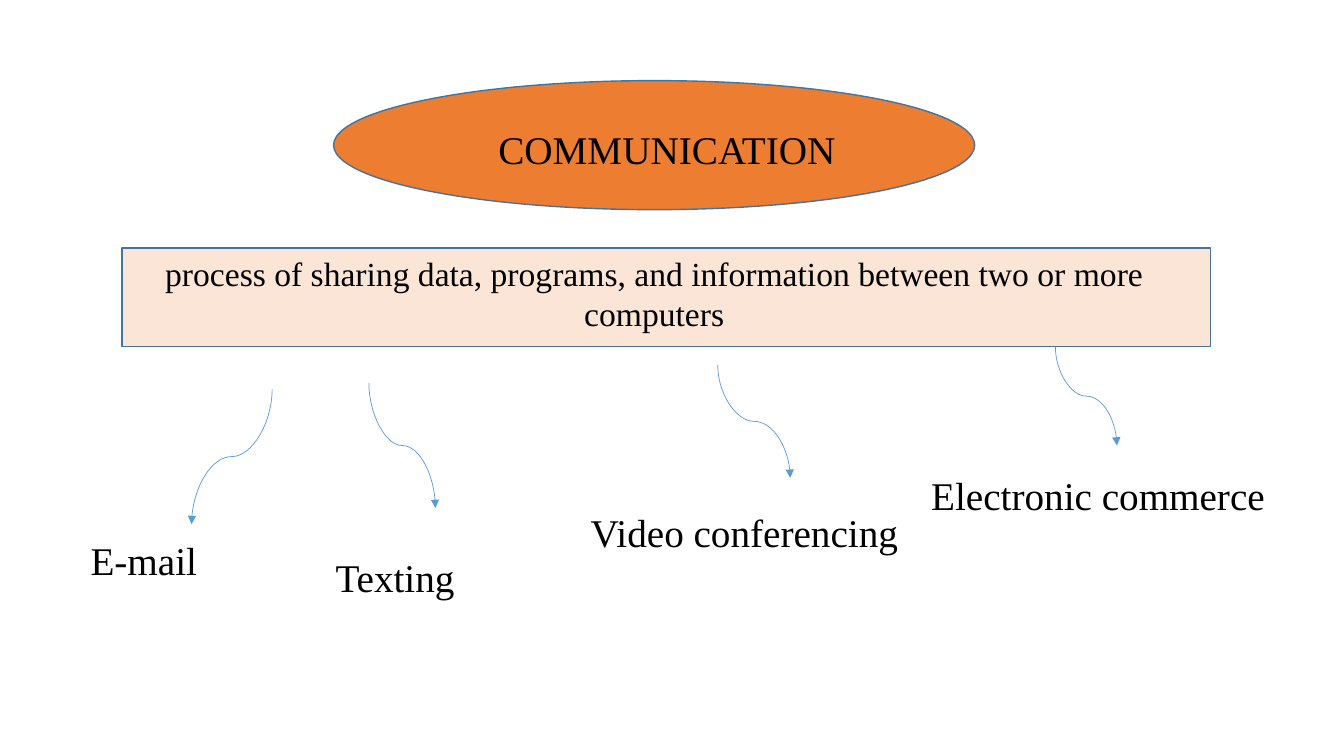
from dataclasses import dataclass

from lxml.etree import SubElement
from pptx import Presentation
from pptx.dml.color import RGBColor
from pptx.enum.shapes import MSO_CONNECTOR, MSO_SHAPE
from pptx.enum.text import MSO_AUTO_SIZE, PP_ALIGN
from pptx.oxml.ns import qn
from pptx.shapes.shapetree import SlideShapes
from pptx.util import Inches, Pt

WIDTH, HEIGHT = Inches(13.33), Inches(7.5)
COLS, ROWS = 40, 30


@dataclass(frozen=True)
class Theme:
    face: str = "Times New Roman"
    ink: RGBColor = RGBColor(0, 0, 0)
    orange: RGBColor = RGBColor(0xED, 0x7D, 0x31)
    peach: RGBColor = RGBColor(0xFB, 0xE5, 0xD6)
    edge: RGBColor = RGBColor(0x43, 0x73, 0x9E)
    arrow: RGBColor = RGBColor(0x5B, 0x9B, 0xD5)
    large: Pt = Pt(28)
    small: Pt = Pt(24)
    thick: Pt = Pt(1)
    thin: Pt = Pt(0.5)


THEME = Theme()


@dataclass(frozen=True)
class Box:
    col: float
    row: float
    wide: float
    high: float

    def place(self) -> tuple[int, int, int, int]:
        return across(self.col), down(self.row), across(self.wide), down(self.high)


@dataclass(frozen=True)
class Panel:
    form: MSO_SHAPE
    box: Box
    fill: RGBColor


@dataclass(frozen=True)
class Label:
    text: str
    box: Box
    size: Pt = THEME.large
    align: PP_ALIGN = PP_ALIGN.LEFT


@dataclass(frozen=True)
class Curve:
    col: float
    row: float
    end_col: float
    end_row: float


def across(cols: float) -> int:
    return round(WIDTH * cols / COLS)


def down(rows: float) -> int:
    return round(HEIGHT * rows / ROWS)


def apply(target: object, format: dict[str, object]) -> None:
    for name, value in format.items():
        setattr(target, name, value)


def draw_panel(shapes: SlideShapes, panel: Panel) -> None:
    shape = shapes.add_shape(panel.form, *panel.box.place())
    shape.shadow.inherit = False
    shape.fill.solid()
    shape.fill.fore_color.rgb = panel.fill
    shape.line.color.rgb = THEME.edge
    shape.line.width = THEME.thick


def draw_label(shapes: SlideShapes, label: Label) -> None:
    frame = shapes.add_textbox(*label.box.place()).text_frame
    apply(frame, {"word_wrap": True, "auto_size": MSO_AUTO_SIZE.SHAPE_TO_FIT_TEXT})
    line = frame.paragraphs[0]
    line.alignment = label.align
    run = line.add_run()
    run.text = label.text
    apply(run.font, {"name": THEME.face, "size": label.size})
    run.font.color.rgb = THEME.ink


def draw_curve(shapes: SlideShapes, curve: Curve) -> None:
    left, top = across(curve.col), down(curve.row)
    right, base = across(curve.end_col), down(curve.end_row)
    mid_x, mid_y = (left + right) // 2, (top + base) // 2
    half_x, half_y = abs(right - left) // 2, (base - top) // 2
    turn, sign = (270, -1) if right > left else (90, 1)
    link = shapes.add_connector(
        MSO_CONNECTOR.CURVE,
        mid_x - sign * half_y, mid_y - half_x,
        mid_x + sign * half_y, mid_y + half_x,
    )
    link.line.color.rgb = THEME.arrow
    link.line.width = THEME.thin
    props = link._element.spPr
    props.find(qn("a:xfrm")).set("rot", str(turn * 60000))
    SubElement(props.find(qn("a:ln")), qn("a:tailEnd"), type="triangle")
    SubElement(props, qn("a:effectLst"))


PANELS = (
    Panel(MSO_SHAPE.OVAL, Box(9.93, 3.2, 19.08, 5.12), THEME.orange),
    Panel(MSO_SHAPE.RECTANGLE, Box(3.63, 9.84, 32.4, 3.92), THEME.peach),
)
LABELS = (
    Label("COMMUNICATION", Box(13.68, 4.76, 12.33, 2.28), align=PP_ALIGN.CENTER),
    Label(
        "process of sharing data, programs, and information between two or more computers",
        Box(4.35, 9.84, 30.24, 4.84), THEME.small, PP_ALIGN.CENTER,
    ),
    Label("E-mail", Box(2.4, 21.08, 16.02, 2.28)),
    Label("Texting", Box(9.69, 21.76, 7.95, 2.28)),
    Label("Video conferencing", Box(17.28, 19.96, 13.11, 2.28)),
    Label("Electronic commerce", Box(27.42, 18.52, 14.4, 2.28)),
)
CURVES = (
    Curve(8.1, 15.44, 5.7, 20.8),
    Curve(10.98, 15.2, 12.96, 20.16),
    Curve(21.36, 14.48, 23.52, 18.96),
    Curve(31.41, 13.76, 33.24, 17.68),
)


def main() -> None:
    deck = Presentation()
    apply(deck, {"slide_width": WIDTH, "slide_height": HEIGHT})
    shapes = deck.slides.add_slide(deck.slide_layouts[6]).shapes
    for panel in PANELS:
        draw_panel(shapes, panel)
    for label in LABELS:
        draw_label(shapes, label)
    for curve in CURVES:
        draw_curve(shapes, curve)
    deck.save("out.pptx")


if __name__ == "__main__":
    main()
